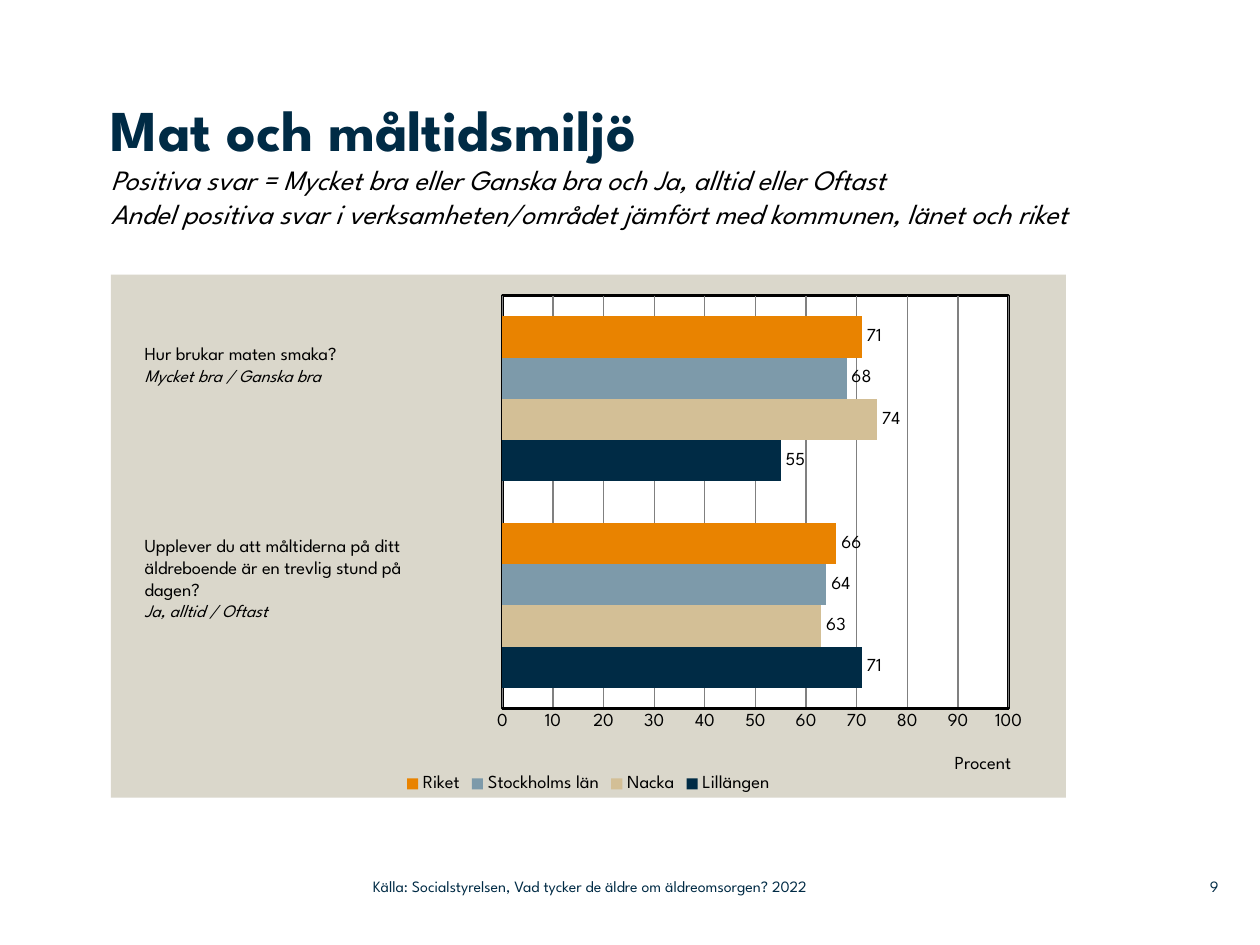
from dataclasses import dataclass

from lxml import etree
from pptx import Presentation
from pptx.chart.data import CategoryChartData
from pptx.dml.color import RGBColor
from pptx.enum.chart import XL_CHART_TYPE, XL_LABEL_POSITION, XL_LEGEND_POSITION, XL_TICK_MARK
from pptx.enum.text import MSO_ANCHOR, PP_ALIGN
from pptx.oxml import parse_xml
from pptx.oxml.ns import nsdecls, qn
from pptx.util import Inches, Pt

BAR = XL_CHART_TYPE.BAR_CLUSTERED
LABEL_END = XL_LABEL_POSITION.OUTSIDE_END
LEGEND_BOTTOM = XL_LEGEND_POSITION.BOTTOM
NO_TICK = XL_TICK_MARK.NONE
TOP, MIDDLE = MSO_ANCHOR.TOP, MSO_ANCHOR.MIDDLE
LEFT, RIGHT = PP_ALIGN.LEFT, PP_ALIGN.RIGHT


@dataclass(frozen=True)
class Theme:
    """Colours, font and type sizes of the slide."""

    font: str = "League Spartan"
    navy: str = "002B45"
    black: str = "000000"
    white: str = "FFFFFF"
    panel: str = "DAD7CB"
    grid: str = "808080"
    sand: str = "D3BF96"
    steel: str = "7D9AAA"
    orange: str = "E98300"
    title: float = 33
    subtitle: float = 16
    body: float = 10.5
    answer: float = 10
    footer: float = 9


THEME = Theme()
SERIES = (
    ("Lillängen", (71, 55), THEME.navy),
    ("Nacka", (63, 74), THEME.sand),
    ("Stockholms län", (64, 68), THEME.steel),
    ("Riket", (66, 71), THEME.orange),
)
QUESTIONS = (
    (2.67, 0.63, ("Hur brukar maten smaka?",), "Mycket bra / Ganska bra"),
    (4.19, 0.98, ("Upplever du att måltiderna på ditt äldreboende är en trevlig stund på", "dagen?"),
     "Ja, alltid / Oftast"),
)


def format_font(font, size, color=THEME.black, bold=False, italic=False):
    """Set the typeface, size, colour and style of a font."""
    values = {"name": THEME.font, "size": Pt(size), "bold": bold, "italic": italic}
    for name, value in values.items():
        setattr(font, name, value)
    font.color.rgb = RGBColor.from_string(color)


def add_span(para, text, size, **style):
    """Append a formatted run to a paragraph."""
    span = para.add_run()
    span.text = text
    format_font(span.font, size, **style)


def format_frame(frame, anchor=TOP, inset=True):
    """Set wrapping, anchoring and margins of a text frame."""
    values = {"word_wrap": True, "vertical_anchor": anchor}
    if not inset:
        sides = ("left", "top", "right", "bottom")
        values.update({f"margin_{side}": 0 for side in sides})
    for name, value in values.items():
        setattr(frame, name, value)


def add_title(page):
    """Place the heading and its two explanatory lines in the title."""
    title = page.shapes.title
    place = {"left": 0.88, "top": 0.74, "width": 8.42, "height": 1.44}
    for name, value in place.items():
        setattr(title, name, Inches(value))
    format_frame(title.text_frame, inset=False)
    para = title.text_frame.paragraphs[0]
    para.alignment = LEFT
    add_span(para, "Mat och måltidsmiljö", THEME.title, color=THEME.navy, bold=True)
    for line in (
        "Positiva svar = Mycket bra eller Ganska bra och Ja, alltid eller Oftast",
        "Andel positiva svar i verksamheten/området jämfört med kommunen, länet och riket",
    ):
        para.add_line_break()
        add_span(para, line, THEME.subtitle, italic=True)


def add_question(page, top, height, lines, answer):
    """Add a survey question with its positive answers in italics."""
    box = page.shapes.add_textbox(Inches(1.05), Inches(top), Inches(2.77), Inches(height))
    format_frame(box.text_frame)
    para = box.text_frame.paragraphs[0]
    for line in lines:
        add_span(para, line, THEME.body)
        para = box.text_frame.add_paragraph()
    add_span(para, answer, THEME.answer, italic=True)


def add_footer(page, text, left, width, align=LEFT):
    """Add a small text on the footer line."""
    box = page.shapes.add_textbox(Inches(left), Inches(6.89), Inches(width), Inches(0.29))
    format_frame(box.text_frame, MIDDLE, inset=False)
    para = box.text_frame.paragraphs[0]
    para.alignment = align
    add_span(para, text, THEME.footer, color=THEME.navy)


def set_layout(element, **values):
    """Give a chart part a manual layout."""
    for old in element.findall(qn("c:layout")):
        element.remove(old)
    layout = parse_xml(f"<c:layout {nsdecls('c')}><c:manualLayout/></c:layout>")
    for name, value in values.items():
        etree.SubElement(layout[0], qn(f"c:{name}")).set("val", str(value))
    text = element.find(qn("c:tx"))
    element.insert(0 if text is None else element.index(text) + 1, layout)


def shape_properties(color, line=""):
    """Return chart shape properties with a solid fill and a line."""
    return parse_xml(
        f'<c:spPr {nsdecls("c", "a")}><a:solidFill><a:srgbClr val="{color}"/></a:solidFill>'
        f"{line or '<a:ln><a:noFill/></a:ln>'}</c:spPr>"
    )


def format_value_axis(axis):
    """Set scale, gridlines, line and title of the percentage axis."""
    values = {
        "minimum_scale": 0, "maximum_scale": 100, "major_unit": 10,
        "major_tick_mark": NO_TICK, "minor_tick_mark": NO_TICK, "has_major_gridlines": True,
    }
    for name, value in values.items():
        setattr(axis, name, value)
    lines = ((axis.format.line, THEME.black, 2), (axis.major_gridlines.format.line, THEME.grid, 0.75))
    for line, color, width in lines:
        line.color.rgb = RGBColor.from_string(color)
        line.width = Pt(width)
    format_font(axis.tick_labels.font, THEME.body)
    add_span(axis.axis_title.text_frame.paragraphs[0], "Procent", THEME.body)
    set_layout(axis.axis_title._element, xMode="edge", yMode="edge", x=0.88, y=0.91)


def format_areas(chart):
    """Fill the chart and plot areas and place the plot."""
    line = (
        f'<a:ln w="{Pt(2)}"><a:solidFill><a:srgbClr val="{THEME.black}"/></a:solidFill></a:ln>'
    )
    space = chart._chartSpace
    space.chart.addnext(shape_properties(THEME.panel))
    plot_area = space.chart.plotArea
    plot_area.append(shape_properties(THEME.white, line))
    set_layout(
        plot_area, layoutTarget="inner", xMode="edge", yMode="edge", x=0.41, y=0.04, w=0.53, h=0.79
    )


def add_answer_chart(page):
    """Add the bar chart of positive answers."""
    data = CategoryChartData()
    data.categories = ("1", "2")
    for name, values, _ in SERIES:
        data.add_series(name, values)
    frame = page.shapes.add_chart(BAR, Inches(0.88), Inches(2.18), Inches(7.58), Inches(4.15), data)
    chart = frame.chart
    format_font(chart.font, THEME.body)
    chart.has_title = False
    chart.has_legend = True
    chart.legend.position = LEGEND_BOTTOM
    chart.legend.include_in_layout = False
    format_font(chart.legend.font, THEME.body)
    chart.category_axis.visible = False
    format_value_axis(chart.value_axis)
    plot = chart.plots[0]
    plot.gap_width, plot.overlap, plot.vary_by_categories = 100, 0, False
    for series, (_, _, color) in zip(plot.series, SERIES):
        series.format.fill.solid()
        series.format.fill.fore_color.rgb = RGBColor.from_string(color)
        labels = series.data_labels
        labels.show_value = True
        labels.position = LABEL_END
        format_font(labels.font, THEME.body)
    format_areas(chart)


def main():
    """Build the slide and save the deck."""
    deck = Presentation()
    deck.slide_width, deck.slide_height = Inches(10), Inches(7.5)
    page = deck.slides.add_slide(deck.slide_layouts[5])
    add_title(page)
    add_answer_chart(page)
    for question in QUESTIONS:
        add_question(page, *question)
    add_footer(page, "Källa: Socialstyrelsen, Vad tycker de äldre om äldreomsorgen? 2022", 2.96, 4.43)
    add_footer(page, "9", 9.2, 0.47, RIGHT)
    deck.save("out.pptx")


if __name__ == "__main__":
    main()
